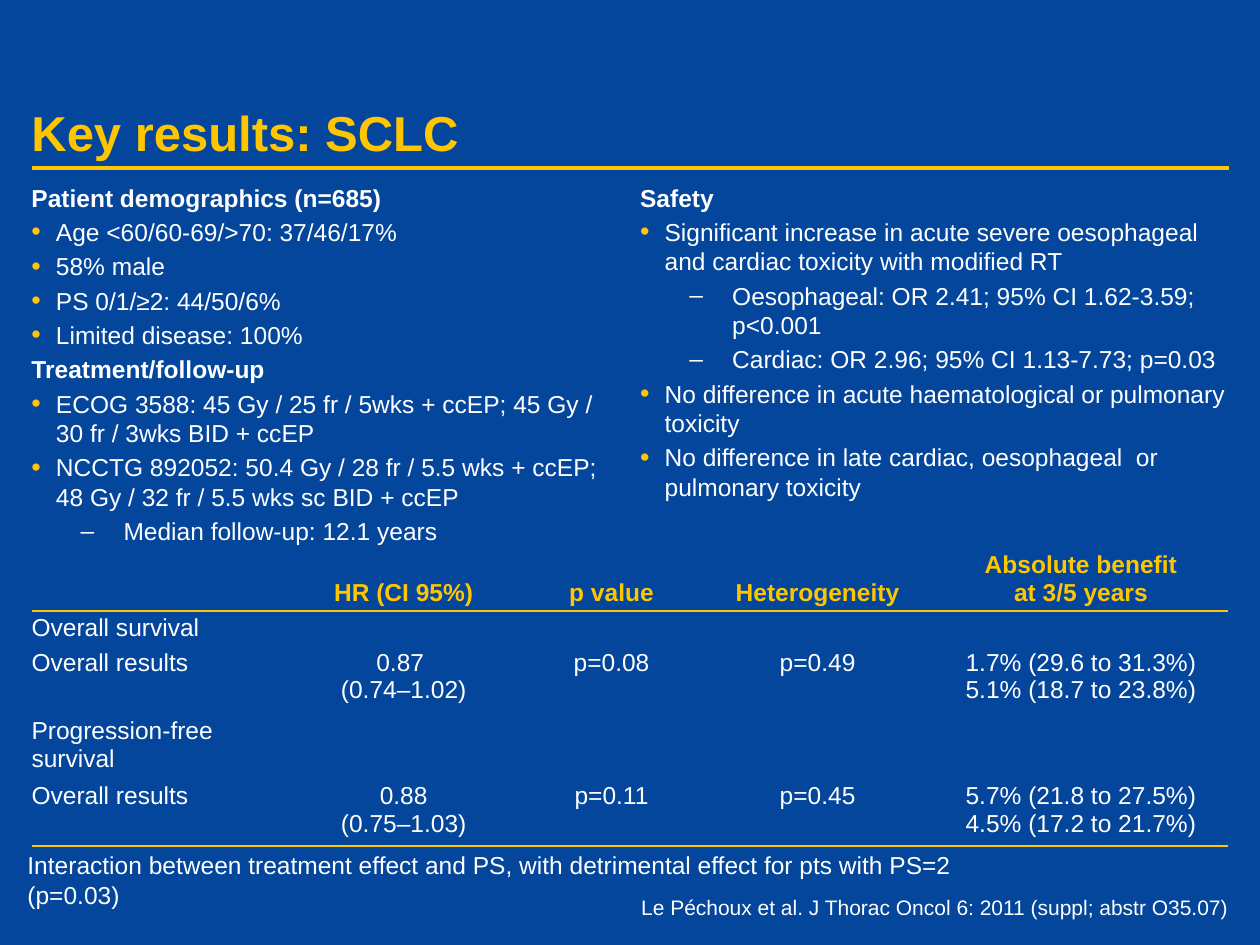
from lxml.etree import SubElement
from pptx import Presentation
from pptx.dml.color import RGBColor
from pptx.enum.shapes import MSO_CONNECTOR
from pptx.enum.text import MSO_ANCHOR, PP_ALIGN
from pptx.oxml import parse_xml
from pptx.oxml.ns import nsdecls, qn
from pptx.util import Pt

BLUE = RGBColor(0x03, 0x46, 0x9C)
GOLD = RGBColor(0xFF, 0xC6, 0x00)
WHITE = RGBColor(0xFF, 0xFF, 0xFF)
NO_STYLE = "{2D5ABB26-0587-4C30-8999-92F81FD0307C}"
LEFT, RIGHT, WIDTH = 18, 702, 684
COLUMN_W = 336.2

# Kinds of paragraph in the text columns
HEAD, ITEM, SUB = range(3)


class Deck:
    """Holds the style and the current slide."""

    font = "Arial"
    size = 14

    def __init__(self, prs):
        self.s = prs.slides.add_slide(prs.slide_layouts[6])
        self.s.background.fill.solid()
        self.s.background.fill.fore_color.rgb = BLUE

    def style(self, p, color=WHITE, size=size, bold=False, align=PP_ALIGN.LEFT):
        p.alignment = align
        for r in p.runs:
            r.font.name, r.font.size, r.font.bold = self.font, Pt(size), bold
            r.font.color.rgb = color

    def text(self, box, text, insets=(7.2, 3.6, 7.2, 3.6),
             anchor=MSO_ANCHOR.TOP, **style):
        tf = self.s.shapes.add_textbox(*map(Pt, box)).text_frame
        tf.word_wrap = True
        tf.vertical_anchor = anchor
        (tf.margin_left, tf.margin_top,
         tf.margin_right, tf.margin_bottom) = map(Pt, insets)
        tf.text = text
        for p in tf.paragraphs:
            self.style(p, **style)
        return tf

    def outline(self, left, entries):
        tf = self.text((left, 100.8, COLUMN_W, 229.7),
                       "\n".join(text for _, text in entries),
                       insets=(0, 3.6, 0, 3.6))
        for p, (kind, _) in zip(tf.paragraphs, entries):
            self.style(p, bold=kind == HEAD)
            p.space_before = Pt(2.8)
            p.level = 1 if kind == SUB else 0
            margin, indent = (52.6, -24.5) if kind == SUB else (14, -14)
            pPr = p._p.get_or_add_pPr()
            pPr.set("marL", str(Pt(margin)))
            pPr.set("indent", str(Pt(indent)))
            if kind == ITEM:
                color = SubElement(pPr, qn("a:buClr"))
                SubElement(color, qn("a:srgbClr"), val=str(GOLD))
                SubElement(pPr, qn("a:buSzPct"), val="110000")
            if kind == HEAD:
                SubElement(pPr, qn("a:buNone"))
            else:
                SubElement(pPr, qn("a:buFont"), typeface=self.font)
                SubElement(pPr, qn("a:buChar"), char="•" if kind == ITEM else "–")

    def line(self, x1, y1, x2, y2, width):
        c = self.s.shapes.add_connector(MSO_CONNECTOR.STRAIGHT,
                                        *map(Pt, (x1, y1, x2, y2)))
        c.line.color.rgb = GOLD
        c.line.width = Pt(width)
        SubElement(c._element.spPr, qn("a:effectLst"))

    def table(self, left, top, widths, heights, rows, anchors, ruled):
        tbl = self.s.shapes.add_table(
            len(rows), len(widths), Pt(left), Pt(top),
            Pt(sum(widths)), Pt(sum(heights))).table
        tbl._tbl.tblPr.find(qn("a:tableStyleId")).text = NO_STYLE
        tbl.first_row = tbl.horz_banding = False
        for col, width in zip(tbl.columns, widths):
            col.width = Pt(width)
        for i, (row, height) in enumerate(zip(rows, heights)):
            tbl.rows[i].height = Pt(height)
            for j, text in enumerate(row):
                self.cell(tbl.cell(i, j), text, anchors[i], i == 0, j == 0)
                if i in ruled:
                    self.rule_below(tbl.cell(i, j))

    def cell(self, cell, text, anchor, header, label):
        cell.fill.background()
        cell.vertical_anchor = anchor
        cell.margin_left = Pt(0 if label else 3.6)
        cell.margin_right = Pt(3.6)
        cell.margin_top = cell.margin_bottom = Pt(
            0.72 if anchor == MSO_ANCHOR.MIDDLE else 2.5)
        cell.text_frame.text = text
        for p in cell.text_frame.paragraphs:
            self.style(p, color=GOLD if header else WHITE, bold=header,
                       align=PP_ALIGN.LEFT if label else PP_ALIGN.CENTER)
            if not text:
                SubElement(p._p, qn("a:endParaRPr"), sz=str(self.size * 100))

    def rule_below(self, cell):
        cell._tc.get_or_add_tcPr().insert(0, parse_xml(
            f'<a:lnB {nsdecls("a")} w="{Pt(1.5)}"><a:solidFill>'
            f'<a:srgbClr val="{GOLD}"/></a:solidFill></a:lnB>'))


def main():
    prs = Presentation()
    prs.slide_width, prs.slide_height = Pt(720), Pt(540)
    deck = Deck(prs)

    # Title and rule
    deck.line(LEFT, 95.8, RIGHT, 95.8, 2.25)
    deck.text((LEFT, 18, WIDTH, 74.2), "Key results: SCLC",
              insets=(0, 3.6, 0, 0), anchor=MSO_ANCHOR.BOTTOM,
              color=GOLD, size=28, bold=True)

    # Text columns
    deck.outline(LEFT, [
        (HEAD, "Patient demographics (n=685)"),
        (ITEM, "Age <60/60-69/>70: 37/46/17%"),
        (ITEM, "58% male"),
        (ITEM, "PS 0/1/≥2: 44/50/6%"),
        (ITEM, "Limited disease: 100%"),
        (HEAD, "Treatment/follow-up"),
        (ITEM, "ECOG 3588: 45 Gy / 25 fr / 5wks + ccEP; "
               "45 Gy / 30 fr / 3wks BID + ccEP"),
        (ITEM, "NCCTG 892052: 50.4 Gy / 28 fr / 5.5 wks + ccEP; "
               "48 Gy / 32 fr / 5.5 wks sc BID + ccEP"),
        (SUB, "Median follow-up: 12.1 years"),
    ])
    deck.outline(RIGHT - COLUMN_W, [
        (HEAD, "Safety"),
        (ITEM, "Significant increase in acute severe oesophageal "
               "and cardiac toxicity with modified RT"),
        (SUB, "Oesophageal: OR 2.41; 95% CI 1.62-3.59; p<0.001"),
        (SUB, "Cardiac: OR 2.96; 95% CI 1.13-7.73; p=0.03"),
        (ITEM, "No difference in acute haematological or pulmonary toxicity"),
        (ITEM, "No difference in late cardiac, oesophageal  or pulmonary toxicity"),
    ])

    # Reference
    deck.text((349.2, 507.6, 360, 21.6),
              "Le Péchoux et al. J Thorac Oncol 6: 2011 (suppl; abstr O35.07)",
              size=12, align=PP_ALIGN.RIGHT)

    # Survival results
    top, middle, bottom = MSO_ANCHOR.TOP, MSO_ANCHOR.MIDDLE, MSO_ANCHOR.BOTTOM
    deck.table(
        LEFT, 310.3, [145.4, 134.6, 103, 132.5, 168.5],
        [37.6, 19.5, 37.6, 37.6, 37.6],
        [["", "HR (CI 95%)", "p value", "Heterogeneity",
          "Absolute benefit\nat 3/5 years"],
         ["Overall survival", "", "", "", ""],
         ["Overall results", "0.87 \n(0.74–1.02)", "p=0.08", "p=0.49",
          "1.7% (29.6 to 31.3%)\n5.1% (18.7 to 23.8%)"],
         ["Progression-free\nsurvival", "", "", "", ""],
         ["Overall results", "0.88\n(0.75–1.03)", "p=0.11", "p=0.45",
          "5.7% (21.8 to 27.5%)\n4.5% (17.2 to 21.7%)"]],
        anchors=[bottom, middle, top, middle, top], ruled=(0, 4))

    # Interaction note
    deck.text((8.6, 482.4, 596.9, 24.5),
              "Interaction between treatment effect and PS, with detrimental "
              "effect for pts with PS=2 (p=0.03)")

    prs.save("out.pptx")


if __name__ == "__main__":
    main()
